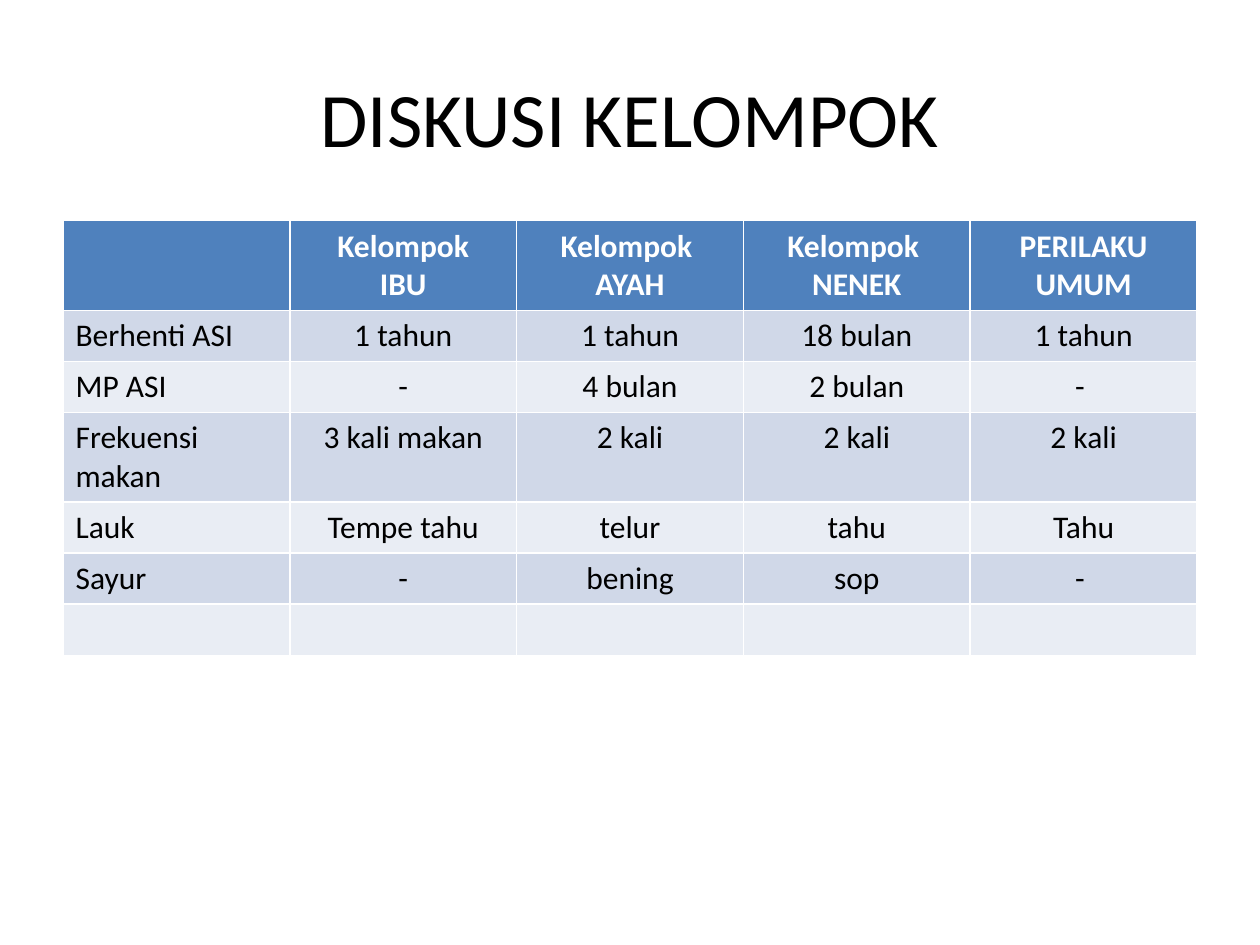
import dataclasses

import pptx
import pptx.dml.color
import pptx.enum.text
import pptx.util

Cm = pptx.util.Cm
Align = pptx.enum.text.PP_ALIGN
Anchor = pptx.enum.text.MSO_ANCHOR


@dataclasses.dataclass(frozen=True)
class Theme:
    font: str = "Calibri"
    ink: str = "000000"
    light: str = "FFFFFF"
    head: str = "4F81BD"
    bands: tuple = ("D0D8E8", "E9EDF4")
    title: int = 44
    body: int = 18


def paint(hue):
    return pptx.dml.color.RGBColor.from_string(hue)


def write(frame, text, font, size, hue, bold=False, align=Align.LEFT):
    """Fill a text frame, one paragraph for each line of text."""
    frame.text = text
    for para in frame.paragraphs:
        para.alignment = align
        for run in para.runs:
            run.font.name = font
            run.font.size = pptx.util.Pt(size)
            run.font.bold = bold
            run.font.color.rgb = paint(hue)


class Deck:
    def __init__(self, theme):
        self.theme = theme
        self.show = pptx.Presentation()
        self.show.slide_width = Cm(25.4)
        self.show.slide_height = Cm(19.05)
        self.slide = self.show.slides.add_slide(self.show.slide_layouts[5])

    def title(self, text, left, top, width, height):
        shape = self.slide.shapes.title
        shape.left, shape.top = Cm(left), Cm(top)
        shape.width, shape.height = Cm(width), Cm(height)
        shape.text_frame.vertical_anchor = Anchor.MIDDLE
        write(shape.text_frame, text, self.theme.font, self.theme.title,
              self.theme.ink, align=Align.CENTER)

    def table(self, rows, left, top, width, height):
        """Add a table with a header row and banded rows below it."""
        theme = self.theme
        grid = self.slide.shapes.add_table(
            len(rows), len(rows[0]),
            Cm(left), Cm(top), Cm(width), Cm(height)).table
        for r, row in enumerate(rows):
            first = r == 0
            fill = theme.head if first else theme.bands[(r - 1) % 2]
            hue = theme.light if first else theme.ink
            for c, text in enumerate(row):
                cell = grid.cell(r, c)
                cell.fill.solid()
                cell.fill.fore_color.rgb = paint(fill)
                write(cell.text_frame, text, theme.font, theme.body, hue,
                      bold=first, align=Align.CENTER if c else Align.LEFT)


def main():
    rows = [
        ("", "Kelompok\nIBU", "Kelompok \nAYAH", "Kelompok \nNENEK",
         "PERILAKU UMUM"),
        ("Berhenti ASI", "1 tahun", "1 tahun", "18 bulan", "1 tahun"),
        ("MP ASI", "-", "4 bulan", "2 bulan", "- "),
        ("Frekuensi makan", "3 kali makan", "2 kali", "2 kali", "2 kali"),
        ("Lauk", "Tempe tahu", "telur", "tahu", "Tahu"),
        ("Sayur", "-", "bening", "sop", "- "),
        ("",) * 5,
    ]
    left, width = 1.27, 22.86
    deck = Deck(Theme())
    deck.title("DISKUSI KELOMPOK", left, 0.76, width, 3.18)
    deck.table(rows, left, 4.45, width, 1.03 * len(rows))
    deck.show.save("out.pptx")


if __name__ == "__main__":
    main()
